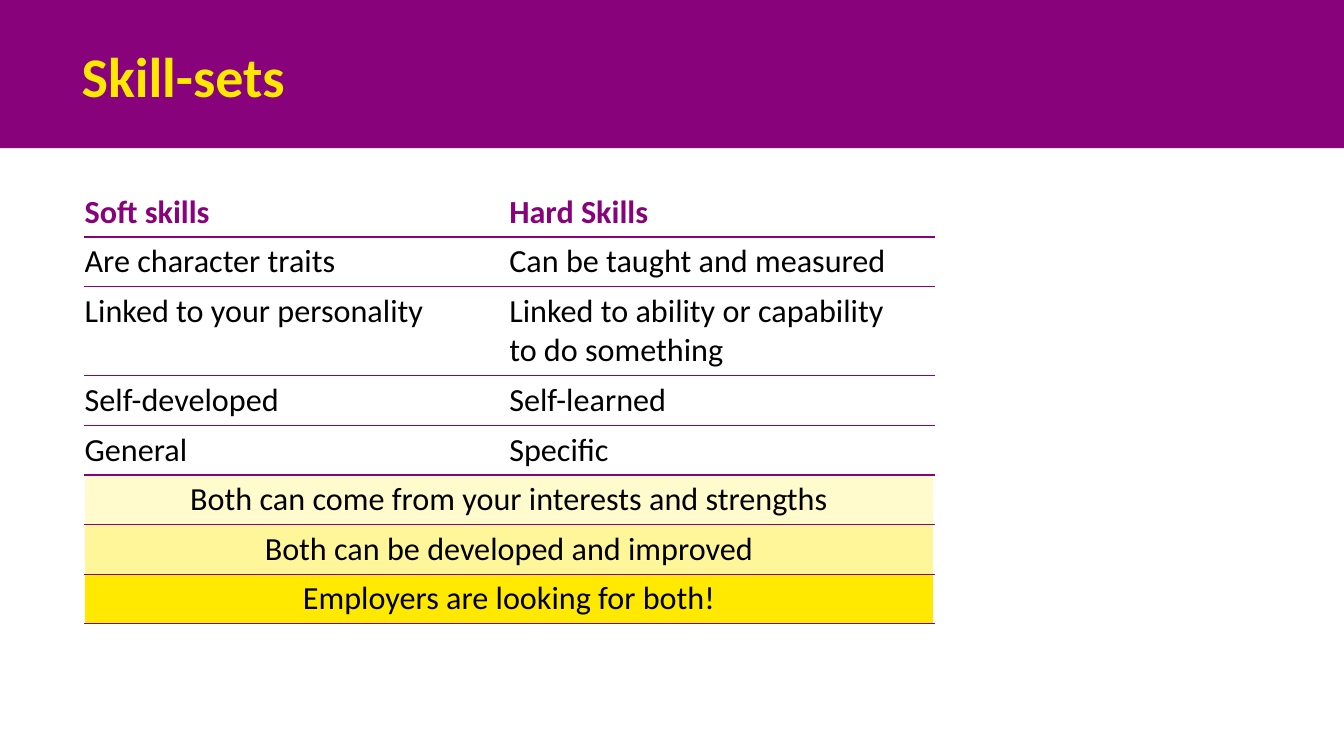
from dataclasses import dataclass

from lxml import etree
from pptx import Presentation
from pptx.dml.color import RGBColor
from pptx.enum import shapes, text
from pptx.oxml.ns import qn
from pptx.util import Inches, Pt

TITLE = "Skill-sets"
HEADINGS = ("Soft skills", "Hard Skills")
CONTRASTS = [
    ("Are character traits", "Can be taught and measured"),
    ("Linked to your personality", "Linked to ability or capability\nto do something"),
    ("Self-developed", "Self-learned"),
    ("General", "Specific"),
]
SHARED = [
    ("Both can come from your interests and strengths", "FFFBCC"),
    ("Both can be developed and improved", "FFF699"),
    ("Employers are looking for both!", "FFE900"),
]


@dataclass(frozen=True)
class Theme:
    font: str = "Calibri"
    purple: str = "87027B"
    yellow: str = "FFE900"
    black: str = "000000"
    white: str = "FFFFFF"
    title_size: int = 40
    table_size: int = 23


THEME = Theme()
SLIDE_WIDTH = 13.34
TABLE_LEFT, TABLE_TOP, COLUMN_WIDTH = 0.84, 1.86, 4.215
LINE_HEIGHT, CELL_PADDING = 0.39, 0.05


def set_font(paragraph, size, color, bold=False):
    font = paragraph.font
    font.name, font.size, font.bold = THEME.font, Pt(size), bold
    font.color.rgb = RGBColor.from_string(color)


def draw_borders(cell, top):
    properties = cell._tc.get_or_add_tcPr()
    edges = {"lnL": THEME.white, "lnR": THEME.white, "lnT": top, "lnB": THEME.purple}
    for edge, color in edges.items():
        line = etree.SubElement(properties, qn(f"a:{edge}"), w=str(Pt(1)))
        fill = etree.SubElement(line, qn("a:solidFill"))
        etree.SubElement(fill, qn("a:srgbClr"), val=color)


def write_cell(cell, words, color=THEME.black, bold=False, centred=False):
    cell.margin_left = Inches(0.1 if centred else 0)
    cell.margin_right = Inches(0.1)
    cell.margin_top = cell.margin_bottom = Inches(CELL_PADDING)
    cell.text = words
    for paragraph in cell.text_frame.paragraphs:
        if centred:
            paragraph.alignment = text.PP_ALIGN.CENTER
        set_font(paragraph, THEME.table_size, color, bold)


def add_title(slide):
    band = slide.shapes.add_shape(shapes.MSO_SHAPE.RECTANGLE, 0, 0,
                                  Inches(SLIDE_WIDTH), Inches(1.47))
    band.shadow.inherit = False
    band.fill.solid()
    band.fill.fore_color.rgb = RGBColor.from_string(THEME.purple)
    band.line.fill.background()
    slide.shapes._spTree.insert(2, band._element)  # behind the title

    title = slide.shapes.title
    title.left, title.top = Inches(0.68), Inches(0.35)
    title.width, title.height = Inches(9.03), Inches(0.79)
    frame = title.text_frame
    frame.text = TITLE
    frame.auto_size = text.MSO_AUTO_SIZE.NONE
    frame.vertical_anchor = text.MSO_ANCHOR.MIDDLE
    frame.margin_left = frame.margin_right = Inches(0.13)
    frame.margin_top = frame.margin_bottom = Inches(0.07)
    frame.paragraphs[0].alignment = text.PP_ALIGN.LEFT
    set_font(frame.paragraphs[0], THEME.title_size, THEME.yellow, bold=True)


def add_skills_table(slide):
    pairs = [HEADINGS, *CONTRASTS]
    line_counts = [max(words.count("\n") + 1 for words in pair) for pair in pairs]
    line_counts += [1] * len(SHARED)
    heights = [count * LINE_HEIGHT + 2 * CELL_PADDING for count in line_counts]
    table = slide.shapes.add_table(
        len(heights), len(HEADINGS), Inches(TABLE_LEFT), Inches(TABLE_TOP),
        Inches(COLUMN_WIDTH * len(HEADINGS)), Inches(sum(heights))).table
    table.first_row = table.horz_banding = False
    for column in table.columns:
        column.width = Inches(COLUMN_WIDTH)
    for index, (row, height) in enumerate(zip(table.rows, heights)):
        row.height = Inches(height)
        for cell in row.cells:
            draw_borders(cell, THEME.purple if index else THEME.white)
            cell.fill.background()

    for index, pair in enumerate(pairs):
        heading = index == 0
        for cell, words in zip(table.rows[index].cells, pair):
            write_cell(cell, words, THEME.purple if heading else THEME.black, heading)

    for index, (words, tint) in enumerate(SHARED, len(pairs)):
        cell = table.cell(index, 0)
        cell.merge(table.cell(index, len(HEADINGS) - 1))
        write_cell(cell, words, centred=True)
        cell.fill.solid()
        cell.fill.fore_color.rgb = RGBColor.from_string(tint)


def main():
    deck = Presentation()
    deck.slide_width, deck.slide_height = Inches(SLIDE_WIDTH), Inches(7.5)
    slide = deck.slides.add_slide(deck.slide_layouts.get_by_name("Title Only"))
    add_title(slide)
    add_skills_table(slide)
    deck.save("out.pptx")


if __name__ == "__main__":
    main()
